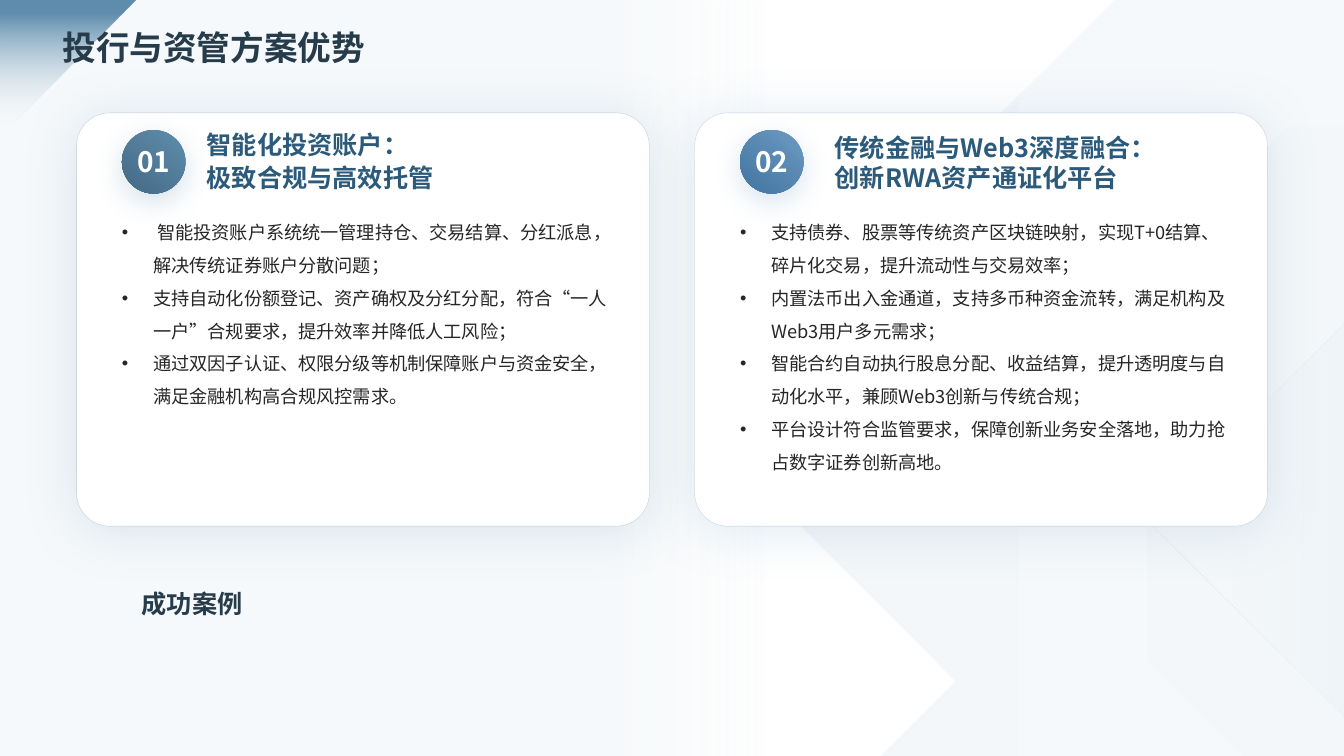
from lxml.etree import SubElement
from pptx import Presentation
from pptx.dml.color import RGBColor
from pptx.enum.shapes import MSO_SHAPE
from pptx.enum.text import MSO_ANCHOR, PP_ALIGN
from pptx.oxml.ns import qn
from pptx.util import Inches, Pt

FONT = "Noto Sans CJK SC"
WHITE = RGBColor(0xFF, 0xFF, 0xFF)
PALE = RGBColor(0xF6, 0xF9, 0xFB)
MIST = RGBColor(0xF3, 0xF7, 0xF9)
HAZE = RGBColor(0xEF, 0xF4, 0xF8)
STEEL = RGBColor(0x5F, 0x8D, 0xAD)
DEEP_STEEL = RGBColor(0x44, 0x6A, 0x85)
SKY = RGBColor(0x6C, 0x9A, 0xC2)
DEEP_SKY = RGBColor(0x42, 0x75, 0xA0)
HEADING = RGBColor(0x2C, 0x5A, 0x7B)
TITLE = RGBColor(0x27, 0x3C, 0x4B)
BODY = RGBColor(0x26, 0x26, 0x26)


def set_gradient(shape, stops, angle):
    shape.shadow.inherit = False
    shape.line.fill.background()
    shape.fill.gradient()
    gradient = shape._element.spPr.find(qn("a:gradFill"))
    for child in list(gradient):
        gradient.remove(child)
    stop_list = SubElement(gradient, qn("a:gsLst"))
    for position, color, alpha in stops:
        stop = SubElement(stop_list, qn("a:gs"), pos=str(position * 1000))
        value = SubElement(stop, qn("a:srgbClr"), val=str(color))
        SubElement(value, qn("a:alpha"), val=str(alpha * 1000))
    SubElement(gradient, qn("a:lin"), ang=str(angle * 60000), scaled="0")


def set_shadow(shape, color, alpha, blur, distance):
    shape.shadow.inherit = False
    effects = shape._element.spPr.find(qn("a:effectLst"))
    shadow = SubElement(effects, qn("a:outerShdw"), blurRad=str(Pt(blur)), dist=str(Pt(distance)),
                        dir="5400000", algn="t", rotWithShape="0")
    value = SubElement(shadow, qn("a:srgbClr"), val=str(color))
    SubElement(value, qn("a:alpha"), val=str(alpha * 1000))


presentation = Presentation()
presentation.slide_width = Inches(13.33)
presentation.slide_height = Inches(7.5)
slide = presentation.slides.add_slide(presentation.slide_layouts[6])
shapes = slide.shapes

facets = [
    ([(11.05, 0), (13.33, 0), (13.33, 7.5), (8.74, 7.5), (9.48, 6.76), (6.89, 4.16)],
     [(0, PALE, 100), (100, MIST, 100)], 180),
    ([(12.77, 1.26), (13.33, 1.26), (13.33, 7.5), (12.33, 7.5), (9.43, 4.6)],
     [(0, PALE, 100), (100, MIST, 100)], 0),
    ([(13.33, 3.21), (13.33, 7.11), (11.38, 5.16)],
     [(0, PALE, 100), (57, MIST, 100), (100, HAZE, 70)], 0),
]
for points, stops, angle in facets:
    corners = [(Inches(x), Inches(y)) for x, y in points]
    builder = shapes.build_freeform(*corners[0])
    builder.add_line_segments(corners[1:], close=True)
    set_gradient(builder.convert_to_shape(), stops, angle)

veil = shapes.add_shape(MSO_SHAPE.RECTANGLE, 0, 0, Inches(13.33), Inches(7.5))
set_gradient(veil, [(45, PALE, 100), (58, PALE, 0)], 0)
corner = shapes.add_shape(MSO_SHAPE.RIGHT_TRIANGLE, 0, 0, Inches(1.35), Inches(1.35))
corner.rotation = 90
set_gradient(corner, [(10, STEEL, 100), (95, PALE, 0)], 0)

cards = [
    {"left": 0.76, "number": "01", "light": STEEL, "dark": DEEP_STEEL,
     "heading_box": (2.05, 1.41, 4.06, 0.5), "heading_spacing": 1.1,
     "heading": ["智能化投资账户：", "极致合规与高效托管"],
     "points": [
         " 智能投资账户系统统一管理持仓、交易结算、分红派息，解决传统证券账户分散问题；",
         "支持自动化份额登记、资产确权及分红分配，符合“一人一户”合规要求，提升效率并降低人工风险；",
         "通过双因子认证、权限分级等机制保障账户与资金安全，满足金融机构高合规风控需求。"]},
    {"left": 6.89, "number": "02", "light": SKY, "dark": DEEP_SKY,
     "heading_box": (8.28, 1.41, 3.97, 0.5), "heading_spacing": None,
     "heading": ["传统金融与Web3深度融合：", "创新RWA资产通证化平台"],
     "points": [
         "支持债券、股票等传统资产区块链映射，实现T+0结算、碎片化交易，提升流动性与交易效率；",
         "内置法币出入金通道，支持多币种资金流转，满足机构及Web3用户多元需求；",
         "智能合约自动执行股息分配、收益结算，提升透明度与自动化水平，兼顾Web3创新与传统合规；",
         "平台设计符合监管要求，保障创新业务安全落地，助力抢占数字证券创新高地。"]},
]

badge_format = {"size": Pt(20), "bold": True, "color": WHITE, "anchor": MSO_ANCHOR.MIDDLE,
                "align": PP_ALIGN.CENTER, "wrap": False}
body_format = {"size": Pt(13), "bold": False, "color": BODY, "anchor": MSO_ANCHOR.TOP,
               "spacing": 1.5, "bullet": True}
heading_format = {"size": Pt(18), "bold": True, "color": HEADING, "anchor": MSO_ANCHOR.BOTTOM}
title_format = {**heading_format, "size": Pt(24), "color": TITLE}
case_format = {**heading_format, "color": TITLE, "align": PP_ALIGN.CENTER}

texts = []
for card in cards:
    left, light = card["left"], card["light"]
    for alpha in (100, 20):
        panel = shapes.add_shape(MSO_SHAPE.ROUNDED_RECTANGLE, Inches(left), Inches(1.12),
                                 Inches(5.68), Inches(4.1))
        panel.adjustments[0] = 0.08
        panel.fill.solid()
        panel.fill.fore_color.rgb = WHITE
        panel.line.color.rgb = light
        panel.line.width = Pt(0.25)
        fill_color, line_color = list(panel._element.spPr.iter(qn("a:srgbClr")))
        SubElement(fill_color, qn("a:alpha"), val=str(alpha * 1000))
        SubElement(line_color, qn("a:alpha"), val="20000")
        panel.shadow.inherit = False
        if alpha == 100:
            set_shadow(panel, light, 20, 40, 4)
    badge = shapes.add_shape(MSO_SHAPE.OVAL, Inches(left + 0.45), Inches(1.29),
                             Inches(0.63), Inches(0.63))
    set_gradient(badge, [(0, light, 100), (100, card["dark"], 100)], 128)
    set_shadow(badge, light, 25, 20, 6)
    body = shapes.add_textbox(Inches(left + 0.45), Inches(2.09), Inches(4.91), Inches(2.8))
    heading = shapes.add_textbox(*map(Inches, card["heading_box"]))
    texts += [
        (badge, [card["number"]], badge_format),
        (body, card["points"], body_format),
        (heading, card["heading"], {**heading_format, "spacing": card["heading_spacing"]}),
    ]

title = shapes.add_textbox(Inches(0.62), Inches(0.07), Inches(12.38), Inches(0.6))
case = shapes.add_textbox(Inches(0.99), Inches(5.73), Inches(1.83), Inches(0.41))
texts += [(title, ["投行与资管方案优势"], title_format), (case, ["成功案例"], case_format)]

for shape, lines, text_format in texts:
    frame = shape.text_frame
    frame_values = {"margin_left": 0, "margin_top": 0, "margin_right": 0, "margin_bottom": 0,
                    "word_wrap": text_format.get("wrap", True),
                    "vertical_anchor": text_format["anchor"]}
    for name, value in frame_values.items():
        setattr(frame, name, value)
    for index, line in enumerate(lines):
        paragraph = frame.add_paragraph() if index else frame.paragraphs[0]
        paragraph.alignment = text_format.get("align", PP_ALIGN.LEFT)
        paragraph.line_spacing = text_format.get("spacing")
        if text_format.get("bullet"):
            properties = paragraph._p.get_or_add_pPr()
            properties.set("marL", str(Inches(0.31)))
            properties.set("indent", str(Inches(-0.31)))
            SubElement(properties, qn("a:buFont"), typeface="Arial")
            SubElement(properties, qn("a:buChar"), char="•")
        run = paragraph.add_run()
        run.text = line
        for name, value in {"name": FONT, "size": text_format["size"],
                            "bold": text_format["bold"]}.items():
            setattr(run.font, name, value)
        run.font.color.rgb = text_format["color"]
        SubElement(run._r.get_or_add_rPr(), qn("a:ea"), typeface=FONT)

presentation.save("out.pptx")
